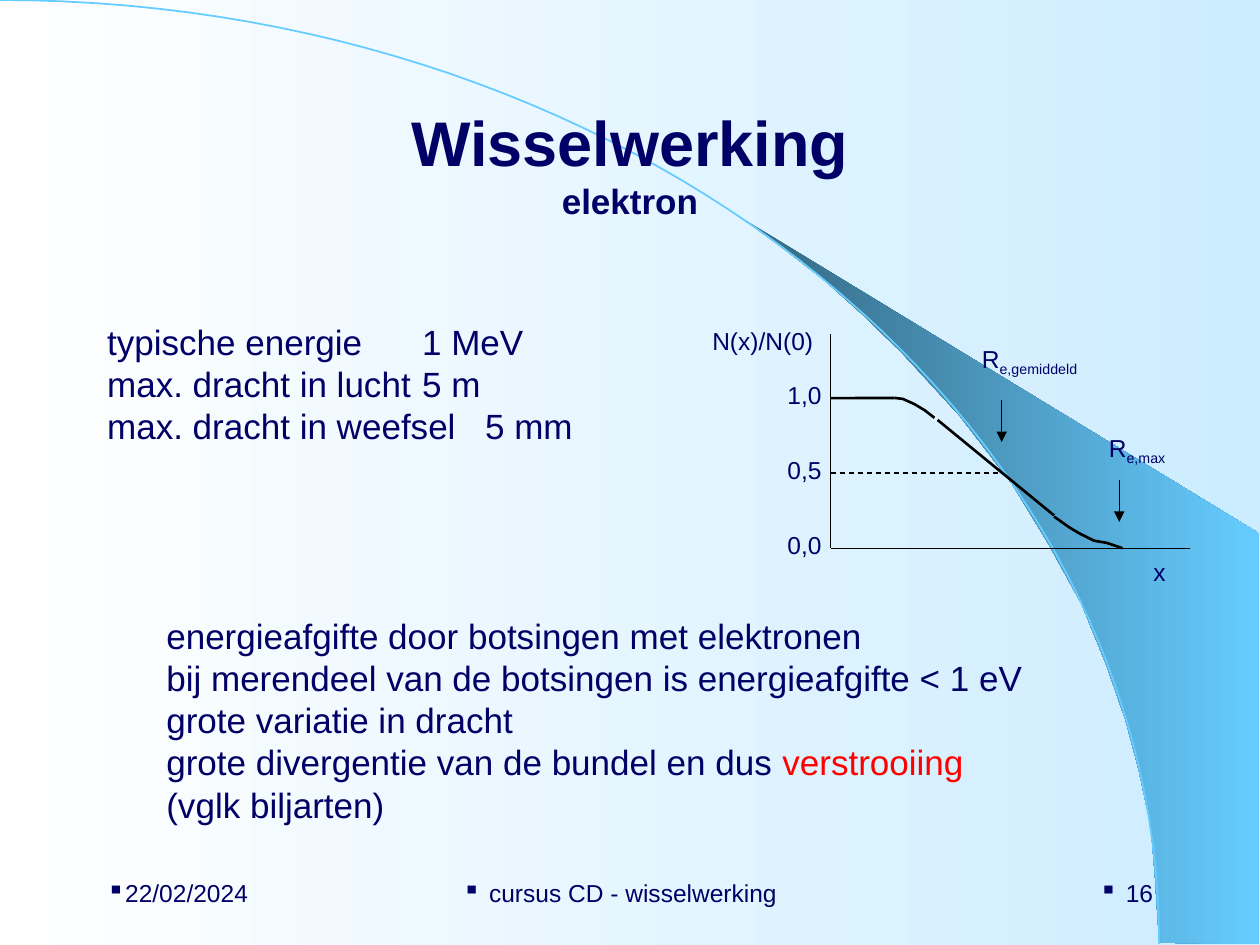
from lxml import etree
from pptx import Presentation
from pptx import util as u
from pptx.dml.color import RGBColor
from pptx.enum import dml, shapes, text
from pptx.oxml import ns

CELL = u.Inches(1) // 12
NAVY = RGBColor(0x00, 0x00, 0x66)
RED = RGBColor(0xFF, 0x00, 0x00)
BLACK = RGBColor(0x00, 0x00, 0x00)
WHITE = RGBColor(0xFF, 0xFF, 0xFF)
PALE = RGBColor(0xCC, 0xEC, 0xFF)
SKY = RGBColor(0x66, 0xCC, 0xFF)
TEAL = RGBColor(0x33, 0x66, 0x80)

AXIS_X, AXIS_Y, UNIT = 79.1, 52.2, 14.28
ARC = [(0, 0), (61, 0), (110.4, 40.2), (110.4, 89.9)]
SWOOSH = [
    (110.4, 89.8), (119.9, 89.9), (119.9, 50.8), (70.7, 20.8), (74.9, 23.9),
    (78.4, 26.6), (82.2, 30), (85.9, 33.6), (91.4, 39.6), (96.4, 46.1),
    (99.8, 51.7), (103, 57.5), (105.4, 63.4), (107.2, 68.6), (108.4, 73.1),
    (109.6, 78.7), (110, 83.5),
]
SHOULDER = [(85.2, 37.9), (86, 38), (87.1, 38.5), (88.1, 39.1), (89, 39.8)]
TAIL = [(100.4, 49.2), (101.8, 50.2), (102.8, 50.8), (104.2, 51.5),
        (105.4, 51.7), (106.9, 52.2)]
FACTS = [("typische energie", "1 MeV"), ("max. dracht in lucht", "5 m"),
         ("max. dracht in weefsel", "5 mm")]
NOTES = [
    [("energieafgifte door botsingen met elektronen", NAVY)],
    [("bij merendeel van de botsingen is energieafgifte < 1 eV", NAVY)],
    [("grote variatie in dracht", NAVY)],
    [("grote divergentie van de bundel en dus ", NAVY), ("verstrooiing", RED)],
    [("(vglk biljarten)", NAVY)],
]


def grid(*counts):
    """Turn counts of grid cells into lengths."""
    return [u.Emu(round(n * CELL)) for n in counts]


def bezier(a, b, c, d, steps=60):
    """Sample a cubic curve."""
    ts = [i / steps for i in range(steps + 1)]
    return [tuple((1 - t) ** 3 * p + 3 * t * (1 - t) ** 2 * q
                  + 3 * t * t * (1 - t) * r + t ** 3 * s
                  for p, q, r, s in zip(a, b, c, d)) for t in ts]


def set_gradient(fill, start, end):
    """Fill from left to right with two colours."""
    fill.gradient()
    fill.gradient_angle = 0
    for stop, colour in zip(fill.gradient_stops, (start, end)):
        stop.color.rgb = colour


def add_outline(page, points, closed=False):
    """Add a freeform without fill or line through points."""
    first, *rest = [grid(*point) for point in points]
    builder = page.shapes.build_freeform(*first)
    builder.add_line_segments(rest, close=closed)
    shape = builder.convert_to_shape()
    shape.shadow.inherit = False
    shape.fill.background()
    shape.line.fill.background()
    return shape


def add_curve(page, points, colour, width):
    """Add an open stroked curve."""
    shape = add_outline(page, points)
    shape.line.color.rgb = colour
    shape.line.width = u.Pt(width)
    return shape


def add_line(page, start, end, width, dashed=False, arrow=False):
    """Add a straight black line, dashed or with an arrowhead on request."""
    line = page.shapes.add_connector(
        shapes.MSO_CONNECTOR.STRAIGHT, *grid(*start, *end))
    line.line.color.rgb = BLACK
    line.line.width = u.Pt(width)
    if dashed:
        line.line.dash_style = dml.MSO_LINE.DASH
    props = line.element.spPr
    if arrow:
        etree.SubElement(props.find(ns.qn("a:ln")), ns.qn("a:tailEnd"), type="triangle")
    etree.SubElement(props, ns.qn("a:effectLst"))


def add_span(para, words, size, colour=NAVY, bold=False):
    """Add one formatted run."""
    span = para.add_run()
    span.text = words
    span.font.name = "Arial"
    span.font.size = u.Pt(size)
    span.font.bold = bold
    span.font.color.rgb = colour
    return span


def add_box(page, place, insets):
    """Add a wrapping text box and return its frame."""
    frame = page.shapes.add_textbox(*grid(*place)).text_frame
    frame.word_wrap = True
    (frame.margin_left, frame.margin_top,
     frame.margin_right, frame.margin_bottom) = map(u.Inches, insets)
    return frame


def add_label(page, place, words, inset=0, subscript=""):
    """Add a graph label with an optional subscript."""
    para = add_box(page, place, (inset, 0.02, inset, 0.02)).paragraphs[0]
    add_span(para, words, 14)
    if subscript:
        span = add_span(para, subscript, 14)
        span.font._element.set("baseline", "-25000")


def add_footer(page, left, width, words, align, hang, right=0.1):
    """Add a bulleted footer text."""
    frame = add_box(page, (left, 82, width, 6), (0.1, 0.05, right, 0.05))
    frame.vertical_anchor = text.MSO_ANCHOR.MIDDLE
    para = frame.paragraphs[0]
    para.alignment = align
    set_indent(para, hang, -hang, "▪")
    add_span(para, words, 14)


def set_indent(para, left, first=0, bullet=None):
    """Set the indents and the bullet of a paragraph."""
    props = para._p.get_or_add_pPr()
    props.set("marL", str(u.Inches(left)))
    props.set("indent", str(u.Inches(first)))
    if bullet:
        etree.SubElement(props, ns.qn("a:buChar"), char=bullet)
    else:
        etree.SubElement(props, ns.qn("a:buNone"))


def place_holder(holder, place):
    """Move a placeholder and return its frame."""
    holder.left, holder.top, holder.width, holder.height = grid(*place)
    holder.text_frame.auto_size = text.MSO_AUTO_SIZE.NONE
    return holder.text_frame


def add_backdrop(page):
    """Draw the gradient, the swoosh and the arc behind the text."""
    set_gradient(page.background.fill, WHITE, PALE)
    swoosh = add_outline(page, SWOOSH, closed=True)
    set_gradient(swoosh.fill, TEAL, SKY)
    arc = add_curve(page, bezier(*ARC), SKY, 1)
    for index, shape in enumerate((swoosh, arc), start=2):
        shape.element.getparent().insert(index, shape.element)


def add_title(page):
    """Fill the title placeholder."""
    frame = place_holder(page.shapes.title, (9, 8, 102, 15))
    frame.vertical_anchor = text.MSO_ANCHOR.MIDDLE
    for i, (words, size) in enumerate([("Wisselwerking", 36), ("elektron", 20)]):
        para = frame.add_paragraph() if i else frame.paragraphs[0]
        para.alignment = text.PP_ALIGN.CENTER
        add_span(para, words, size, bold=True)


def add_body(page):
    """Fill the body placeholder with the facts and the notes."""
    frame = place_holder(page.placeholders[1], (9, 26, 102, 55.8))
    frame.margin_top = u.Inches(0.38)
    lines = [[("\t".join(fact), NAVY)] for fact in FACTS] + NOTES
    for i, spans in enumerate(lines):
        para = frame.add_paragraph() if i else frame.paragraphs[0]
        para.line_spacing = u.Pt(24)
        para.space_before = u.Pt(96 if i == len(FACTS) else 0)
        set_indent(para, 0 if i < len(FACTS) else 0.47)
        if i < len(FACTS):
            tabs = etree.SubElement(para._p.pPr, ns.qn("a:tabLst"))
            etree.SubElement(tabs, ns.qn("a:tab"), pos=str(u.Inches(3.07)), algn="l")
        for words, colour in spans:
            add_span(para, words, 20, colour)


def add_graph(page):
    """Draw the range curve with its axes and labels."""
    add_line(page, (AXIS_X, 31.8), (AXIS_X, AXIS_Y), 0.25)
    add_line(page, (AXIS_X, AXIS_Y), (113.3, AXIS_Y), 0.25)
    for value, words in ((1, "1,0"), (0.5, "0,5"), (0, "0,0")):
        add_label(page, (75, AXIS_Y - UNIT * value - 2, 4.6, 3.5), words)
    add_label(page, (109.6, 52.8, 2, 3), "x", 0.02)
    add_label(page, (67.6, 30.8, 13.2, 3), "N(x)/N(0)", 0.02)
    half = AXIS_Y - UNIT / 2
    add_line(page, (AXIS_X, half), (95.4, half), 0.75, dashed=True)
    add_line(page, (AXIS_X, AXIS_Y - UNIT), SHOULDER[0], 1.5)
    add_curve(page, SHOULDER, BLACK, 1.5)
    add_line(page, (89.3, 40), (100.4, 49.1), 1.5)
    add_curve(page, TAIL, BLACK, 1.5)
    for x, y, left, top, width, name in (
            (95.4, 38.1, 93.5, 32.5, 11.2, "e,gemiddeld"),
            (106.6, 45.7, 105.6, 41, 7.1, "e,max")):
        add_line(page, (x, y), (x, y + 4), 0.75, arrow=True)
        add_label(page, (left, top, width, 3.5), "R", subscript=name)


def main():
    """Build and save the slide."""
    deck = Presentation()
    deck.slide_width, deck.slide_height = grid(120, 90)
    page = deck.slides.add_slide(deck.slide_layouts[1])
    add_backdrop(page)
    add_title(page)
    add_body(page)
    add_graph(page)
    align = text.PP_ALIGN
    add_footer(page, 9, 25, "22/02/2024", align.LEFT, 0)
    add_footer(page, 41, 38, "cursus CD - wisselwerking", align.CENTER, 0.21, 0.26)
    add_footer(page, 86, 25, "16", align.RIGHT, 0.21)
    deck.save("out.pptx")


if __name__ == "__main__":
    main()
